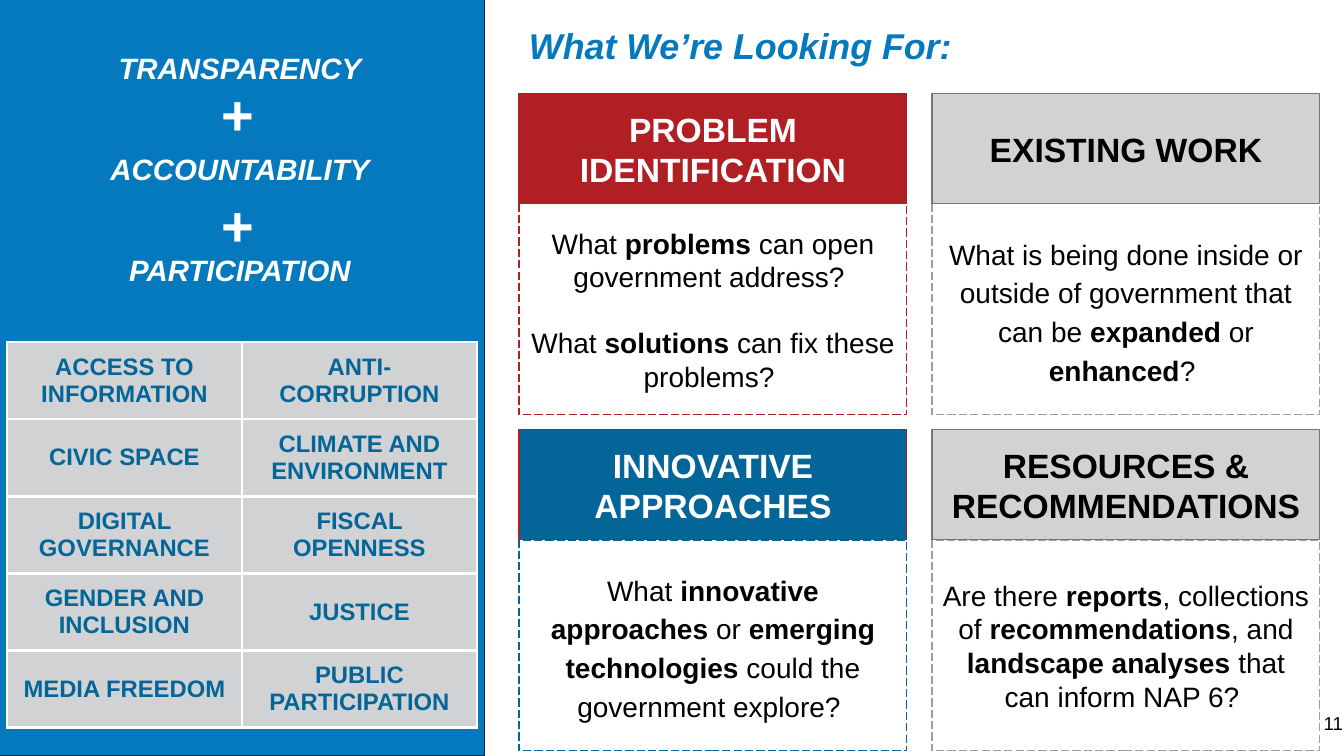
import pptx
import pptx.util
import pptx.dml.color
import pptx.enum.dml
import pptx.enum.shapes
import pptx.enum.text
import pptx.oxml
import pptx.oxml.ns
from dataclasses import dataclass

PILLARS = ["TRANSPARENCY", "ACCOUNTABILITY", "PARTICIPATION"]
TOPICS = [
    ("ACCESS TO INFORMATION", "ANTI- CORRUPTION"),
    ("CIVIC SPACE", "CLIMATE AND ENVIRONMENT"),
    ("DIGITAL GOVERNANCE", "FISCAL OPENNESS"),
    ("GENDER AND INCLUSION", "JUSTICE"),
    ("MEDIA FREEDOM", "PUBLIC PARTICIPATION"),
]
TITLE = "What We’re Looking For:"
PAGE_NUMBER = "11"


@dataclass(frozen=True)
class Theme:
    font: str = "Arial"
    panel: str = "0579BD"
    navy: str = "0E2841"
    blue: str = "046598"
    red: str = "AF1F24"
    grey: str = "D1D2D3"
    edge: str = "757575"
    dash: str = "9E9E9E"
    white: str = "FFFFFF"
    black: str = "000000"
    title_size: float = 25.6
    plus_size: float = 40
    pillar_size: float = 21
    topic_size: float = 17
    heading_size: float = 24
    body_size: float = 20
    number_size: float = 13.3
    line: float = 0.75
    border: float = 2.25


theme = Theme()
RED_CARD = dict(fill=theme.red, edge=theme.red, dash=theme.red, ink=theme.white)
BLUE_CARD = dict(fill=theme.blue, edge=theme.red, dash=theme.blue, ink=theme.white)
GREY_CARD = dict(fill=theme.grey, edge=theme.edge, dash=theme.dash, ink=theme.black)
CARDS = [
    ("PROBLEM IDENTIFICATION",
     ["What *problems* can open government address? ",
      "What *solutions* can fix these problems? "], 1.0, RED_CARD),
    ("EXISTING WORK",
     ["What is being done inside or outside of government that can be "
      "*expanded* or *enhanced*? "], 1.15, GREY_CARD),
    ("INNOVATIVE APPROACHES",
     ["What *innovative approaches* or *emerging technologies* could the "
      "government explore? "], 1.15, BLUE_CARD),
    ("RESOURCES & RECOMMENDATIONS",
     ["Are there *reports*, collections of *recommendations*, and "
      "*landscape analyses* that can inform NAP 6? "], 1.0, GREY_CARD),
]
CARD_LEFT, CARD_TOP, CARD_WIDTH = 519, 94, 388
HEADING_HEIGHT, BODY_HEIGHT = 110, 211
COLUMN_STEP, ROW_STEP = 413, 336

PX = 914400 / 100.8
Align = pptx.enum.text.PP_ALIGN
Anchor = pptx.enum.text.MSO_ANCHOR


def px(length):
    return round(length * PX)


def rgb(value):
    return pptx.dml.color.RGBColor.from_string(value)


def write(frame, lines, size, color, bold=False, italic=False, align=Align.CENTER,
          anchor=Anchor.MIDDLE, spacing=None, gap=0, margin=10):
    frame.word_wrap = True
    frame.vertical_anchor = anchor
    frame.margin_left = frame.margin_right = px(10)
    frame.margin_top = frame.margin_bottom = px(margin)
    for index, line in enumerate(lines):
        para = frame.add_paragraph() if index else frame.paragraphs[0]
        para.alignment = align
        if spacing:
            para.line_spacing = spacing
        if index:
            para.space_before = pptx.util.Pt(gap)
        for order, piece in enumerate(line.split("*")):
            span = para.add_run()
            span.text = piece
            span.font.name = theme.font
            span.font.size = pptx.util.Pt(size)
            span.font.color.rgb = rgb(color)
            span.font.bold = bold or order % 2 == 1
            span.font.italic = italic


def add_text(page, place, text, size, color, **style):
    box = page.shapes.add_textbox(*map(px, place))
    write(box.text_frame, [text], size, color, **style)


def add_box(page, place, line, fill=None, dashed=False):
    box = page.shapes.add_shape(pptx.enum.shapes.MSO_SHAPE.RECTANGLE, *map(px, place))
    box.shadow.inherit = False
    if fill:
        box.fill.solid()
        box.fill.fore_color.rgb = rgb(fill)
    else:
        box.fill.background()
    box.line.color.rgb = rgb(line)
    box.line.width = pptx.util.Pt(theme.line)
    if dashed:
        box.line.dash_style = pptx.enum.dml.MSO_LINE.LONG_DASH
    return box


def add_borders(cell):
    props = cell._tc.get_or_add_tcPr()
    for index, side in enumerate(("lnL", "lnR", "lnT", "lnB")):
        props.insert(index, pptx.oxml.parse_xml(
            f'<a:{side} {pptx.oxml.ns.nsdecls("a")} w="{pptx.util.Pt(theme.border)}">'
            f'<a:solidFill><a:srgbClr val="{theme.white}"/></a:solidFill></a:{side}>'))


def add_topics(page):
    rows, columns = len(TOPICS), len(TOPICS[0])
    table = page.shapes.add_table(rows, columns, px(7), px(342), px(235 * columns), px(70 * rows)).table
    for row, topics in enumerate(TOPICS):
        for column, topic in enumerate(topics):
            cell = table.cell(row, column)
            cell.fill.solid()
            cell.fill.fore_color.rgb = rgb(theme.grey)
            write(cell.text_frame, [topic], theme.topic_size, theme.blue, bold=True)
            cell.vertical_anchor = Anchor.MIDDLE
            cell.margin_left = cell.margin_right = px(10)
            cell.margin_top = cell.margin_bottom = px(10)
            add_borders(cell)


def add_card(page, index, heading, lines, spacing, look):
    row, column = divmod(index, 2)
    left = CARD_LEFT + column * COLUMN_STEP
    top = CARD_TOP + row * ROW_STEP
    body = add_box(page, (left, top + HEADING_HEIGHT, CARD_WIDTH, BODY_HEIGHT),
                   look["dash"], dashed=True)
    write(body.text_frame, lines, theme.body_size, theme.black, spacing=spacing, gap=23)
    head = add_box(page, (left, top, CARD_WIDTH, HEADING_HEIGHT), look["edge"], look["fill"])
    write(head.text_frame, [heading], theme.heading_size, look["ink"], bold=True)


def main():
    deck = pptx.Presentation()
    deck.slide_width, deck.slide_height = px(1344), px(756)
    page = deck.slides.add_slide(deck.slide_layouts[6])
    add_box(page, (-1, -5, 486, 761), theme.navy, theme.panel)
    for index in range(len(PILLARS) - 1):
        add_text(page, (211, 70 + 111 * index, 81, 57), "+", theme.plus_size, theme.white,
                 bold=True, align=Align.LEFT, anchor=Anchor.TOP)
    for index, pillar in enumerate(PILLARS):
        add_text(page, (73, 17 + 101 * index, 334, 102), pillar, theme.pillar_size,
                 theme.white, bold=True, italic=True)
    add_topics(page)
    add_text(page, (519, -5, 695, 106), TITLE, theme.title_size, theme.panel, bold=True,
             italic=True, align=Align.LEFT, spacing=0.9, margin=5)
    for index, card in enumerate(CARDS):
        add_card(page, index, *card)
    add_text(page, (1272, 695, 81, 57), PAGE_NUMBER, theme.number_size, theme.black,
             align=Align.RIGHT)
    deck.save("out.pptx")


if __name__ == "__main__":
    main()
